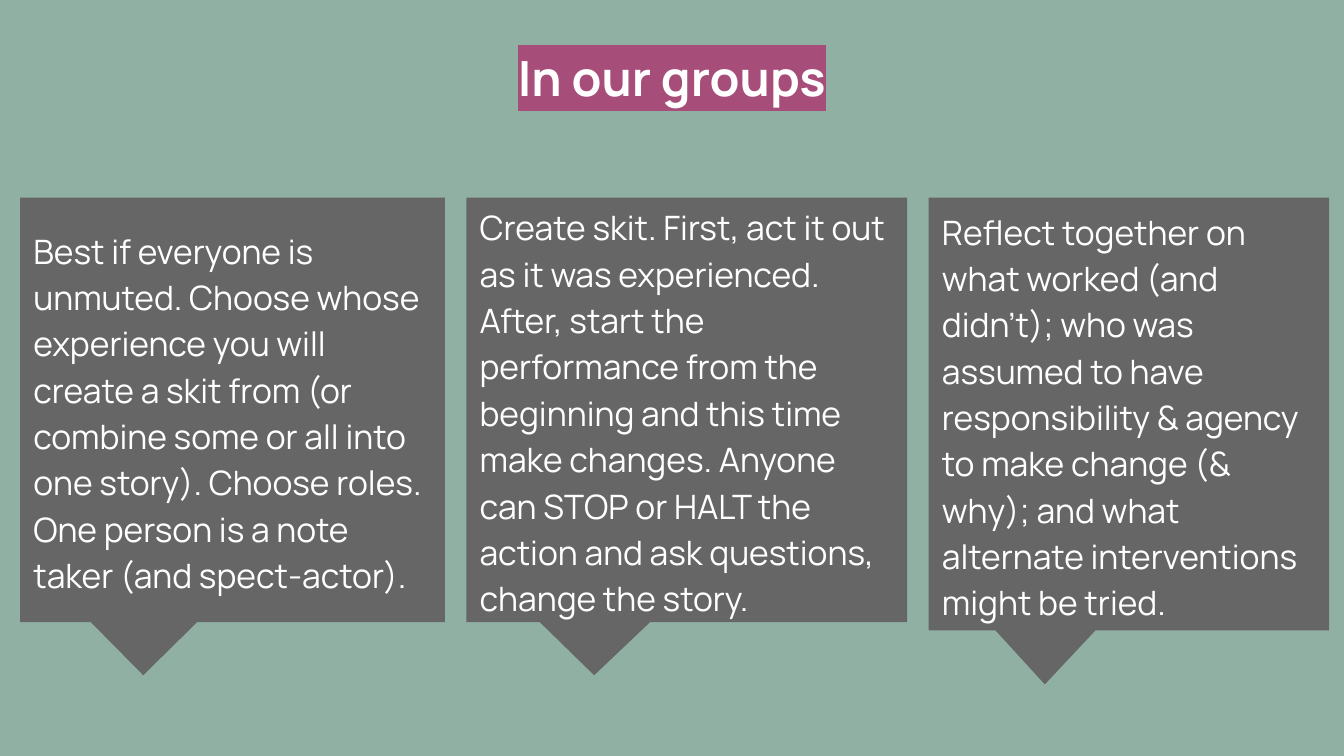
from dataclasses import dataclass

from lxml.etree import SubElement
from pptx import Presentation
from pptx.dml.color import RGBColor
from pptx.enum.shapes import MSO_SHAPE
from pptx.enum.text import MSO_ANCHOR, MSO_AUTO_SIZE, PP_ALIGN
from pptx.oxml.ns import qn
from pptx.shapes.autoshape import Shape
from pptx.slide import Slide
from pptx.text.text import TextFrame
from pptx.util import Inches, Pt

COLORS = {
    "background": "5D8C7A",
    "callout": "666666",
    "text": "FFFFFF",
    "highlight": "A64D79",
}
BACKGROUND_ALPHA = "68000"
TITLE_FONT = {"name": "Manrope", "size": Pt(26), "bold": True}
CALLOUT_FONT = {"name": "Manrope", "size": Pt(18), "bold": False}
FRAME_FORMAT = {
    "word_wrap": True,
    "auto_size": MSO_AUTO_SIZE.NONE,
    "margin_left": Inches(0.1),
    "margin_top": Inches(0.1),
    "margin_right": Inches(0.1),
    "margin_bottom": Inches(0.1),
}
CALLOUT_TOP = 1.47
CALLOUT_GAP = 0.16


@dataclass
class Callout:
    """A step of the group work with its size in inches."""

    width: float
    height: float
    text: str


CALLOUTS = [
    Callout(3.16, 3.16, "Best if everyone is unmuted. Choose whose experience you will "
            "create a skit from (or combine some or all into one story). Choose roles. "
            "One person is a note taker (and spect-actor)."),
    Callout(3.28, 3.16, "Create skit. First, act it out as it was experienced. After, "
            "start the performance from the beginning and this time make changes. "
            "Anyone can STOP or HALT the action and ask questions, change the story."),
    Callout(2.98, 3.22, "Reflect together on what worked (and didn’t); who was assumed "
            "to have responsibility & agency to make change (& why); and what "
            "alternate interventions might be tried."),
]


def color(name: str) -> RGBColor:
    """Look up a colour by its role."""
    return RGBColor.from_string(COLORS[name])


def paint_background(slide: Slide) -> None:
    """Fill the slide with a translucent colour."""
    slide.background.fill.solid()
    slide.background.fill.fore_color.rgb = color("background")
    fill_color = next(slide._element.iter(qn("a:srgbClr")))
    SubElement(fill_color, qn("a:alpha"), val=BACKGROUND_ALPHA)


def write_text(frame: TextFrame, text: str, font_format: dict,
               alignment: PP_ALIGN, anchor: MSO_ANCHOR) -> None:
    """Fill a text frame with one formatted paragraph."""
    for name, value in FRAME_FORMAT.items():
        setattr(frame, name, value)
    frame.vertical_anchor = anchor
    paragraph = frame.paragraphs[0]
    paragraph.alignment = alignment
    paragraph.line_spacing = 1.15
    run = paragraph.add_run()
    run.text = text
    run.font.color.rgb = color("text")
    for name, value in font_format.items():
        setattr(run.font, name, value)


def add_title(slide: Slide, text: str) -> None:
    """Place the highlighted title."""
    title = slide.shapes.title
    title.left, title.top = Inches(0.34), Inches(0.19)
    title.width, title.height = Inches(9.32), Inches(0.63)
    write_text(title.text_frame, text, TITLE_FONT, PP_ALIGN.CENTER, MSO_ANCHOR.TOP)
    fill = title.text_frame.paragraphs[0].runs[0].font._element.find(qn("a:solidFill"))
    highlight = fill.makeelement(qn("a:highlight"), {})
    SubElement(highlight, qn("a:srgbClr"), val=COLORS["highlight"])
    fill.addnext(highlight)


def add_callout(slide: Slide, callout: Callout, left: float) -> Shape:
    """Draw one speech callout with its text."""
    shape = slide.shapes.add_shape(
        MSO_SHAPE.RECTANGULAR_CALLOUT, Inches(left), Inches(CALLOUT_TOP),
        Inches(callout.width), Inches(callout.height))
    shape.adjustments[0], shape.adjustments[1] = -0.21, 5 / 8
    shape.shadow.inherit = False
    shape.fill.solid()
    shape.fill.fore_color.rgb = color("callout")
    shape.line.fill.background()
    write_text(shape.text_frame, callout.text, CALLOUT_FONT,
               PP_ALIGN.LEFT, MSO_ANCHOR.MIDDLE)
    return shape


def main() -> None:
    """Build the slide and save it."""
    presentation = Presentation()
    presentation.slide_width = Inches(10)
    presentation.slide_height = Inches(10) * 9 // 16
    slide = presentation.slides.add_slide(presentation.slide_layouts[5])
    paint_background(slide)
    add_title(slide, "In our groups")
    left = 0.15
    for callout in CALLOUTS:
        add_callout(slide, callout, left)
        left += callout.width + CALLOUT_GAP
    presentation.save("out.pptx")


if __name__ == "__main__":
    main()
